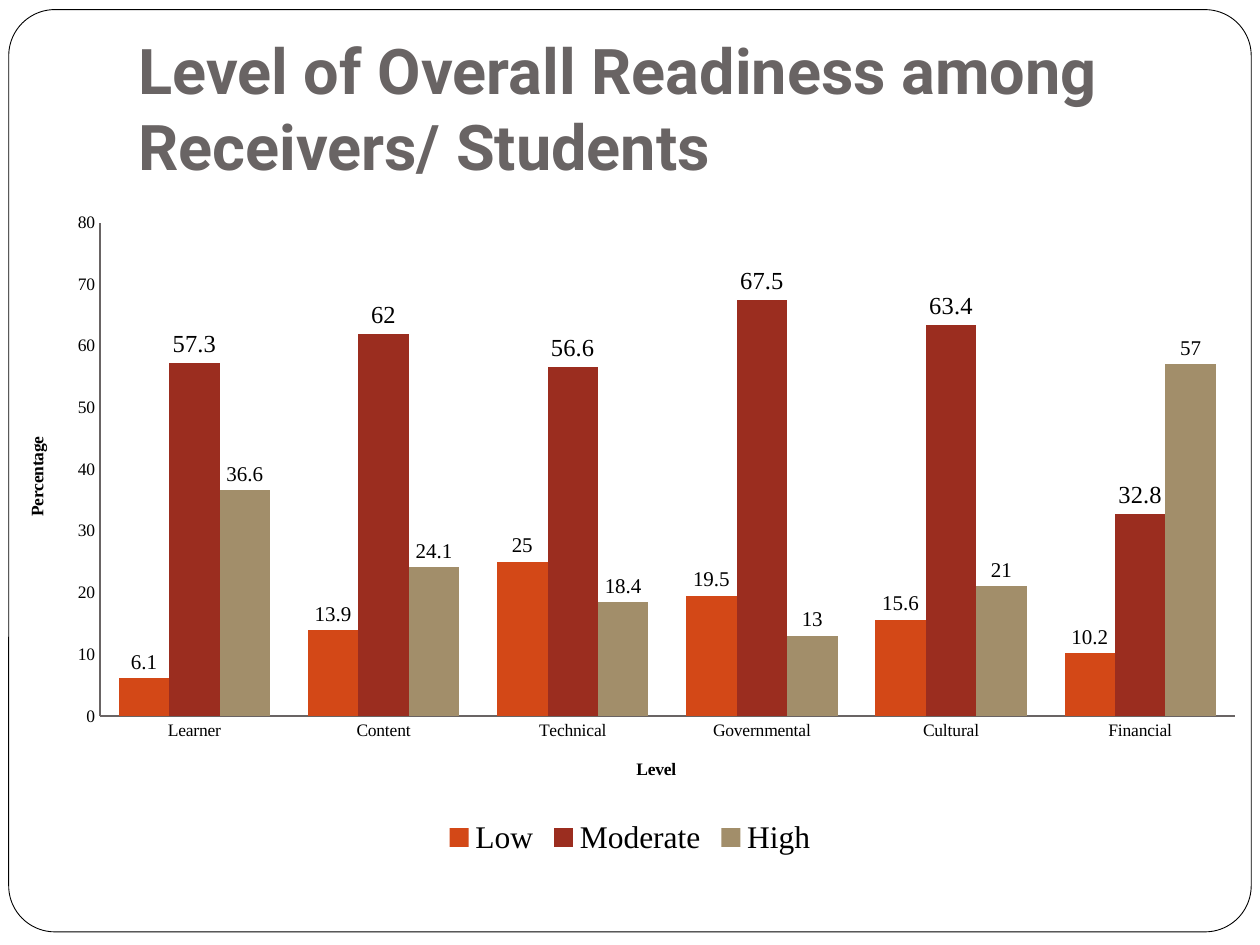
from pptx import Presentation
from pptx.chart.data import CategoryChartData
from pptx.dml.color import RGBColor
from pptx.enum.chart import (XL_CHART_TYPE, XL_LABEL_POSITION,
                             XL_LEGEND_POSITION, XL_TICK_MARK)
from pptx.enum.shapes import MSO_SHAPE
from pptx.enum.text import MSO_ANCHOR
from pptx.util import Pt


def color(code):
    return RGBColor.from_string(code)


def style(font, size, bold=False, face="Times New Roman", code="000000"):
    font.size = Pt(size)
    font.bold = bold
    font.name = face
    font.color.rgb = color(code)


prs = Presentation()
prs.slide_width, prs.slide_height = Pt(720), Pt(540)
slide = prs.slides.add_slide(prs.slide_layouts[6])

# Rounded frame
frame = slide.shapes.add_shape(MSO_SHAPE.ROUNDED_RECTANGLE,
                               Pt(5), Pt(5.5), Pt(710), Pt(527))
frame.adjustments[0] = 0.05
frame.shadow.inherit = False
frame.fill.solid()
frame.fill.fore_color.rgb = color("FFFFFF")
frame.line.color.rgb = color("000000")
frame.line.width = Pt(0.5)

# Title
title = slide.shapes.add_textbox(Pt(72), Pt(21.6), Pt(612), Pt(90))
text = title.text_frame
text.word_wrap = True
text.vertical_anchor = MSO_ANCHOR.BOTTOM
text.margin_bottom = Pt(7.2)
run = text.paragraphs[0].add_run()
run.text = "Level of Overall Readiness among Receivers/ Students"
style(run.font, 36, True, "Roboto", "696464")

# Readiness chart: name, colour, label size, values
levels = [
    ("Low", "D34817", 12, (6.1, 13.9, 25, 19.5, 15.6, 10.2)),
    ("Moderate", "9B2D1F", 14, (57.3, 62, 56.6, 67.5, 63.4, 32.8)),
    ("High", "A28E6A", 12, (36.6, 24.1, 18.4, 13, 21, 57)),
]
data = CategoryChartData()
data.categories = ["Learner", "Content", "Technical",
                   "Governmental", "Cultural", "Financial"]
for name, code, size, values in levels:
    data.add_series(name, values)
chart = slide.shapes.add_chart(XL_CHART_TYPE.COLUMN_CLUSTERED, Pt(0), Pt(114),
                               Pt(720), Pt(378), data).chart
style(chart.font, 10)
chart.has_title = False
chart.has_legend = True
chart.legend.position = XL_LEGEND_POSITION.BOTTOM
chart.legend.include_in_layout = False
style(chart.legend.font, 18)

plot = chart.plots[0]
plot.gap_width = 75
plot.overlap = 0
plot.vary_by_categories = False
for series, (name, code, size, values) in zip(plot.series, levels):
    series.format.fill.solid()
    series.format.fill.fore_color.rgb = color(code)
    labels = series.data_labels
    labels.show_value = True
    labels.position = XL_LABEL_POSITION.OUTSIDE_END
    style(labels.font, size)

for axis, name in ((chart.category_axis, "Level"),
                   (chart.value_axis, "Percentage")):
    axis.has_major_gridlines = False
    axis.major_tick_mark = axis.minor_tick_mark = XL_TICK_MARK.NONE
    axis.format.line.color.rgb = color("696464")
    axis.format.line.width = Pt(0.75)
    style(axis.tick_labels.font, 10)
    run = axis.axis_title.text_frame.paragraphs[0].add_run()
    run.text = name
    style(run.font, 10, True)
chart.value_axis.minimum_scale = 0
chart.value_axis.maximum_scale = 80
chart.value_axis.major_unit = 10

prs.save("out.pptx")
